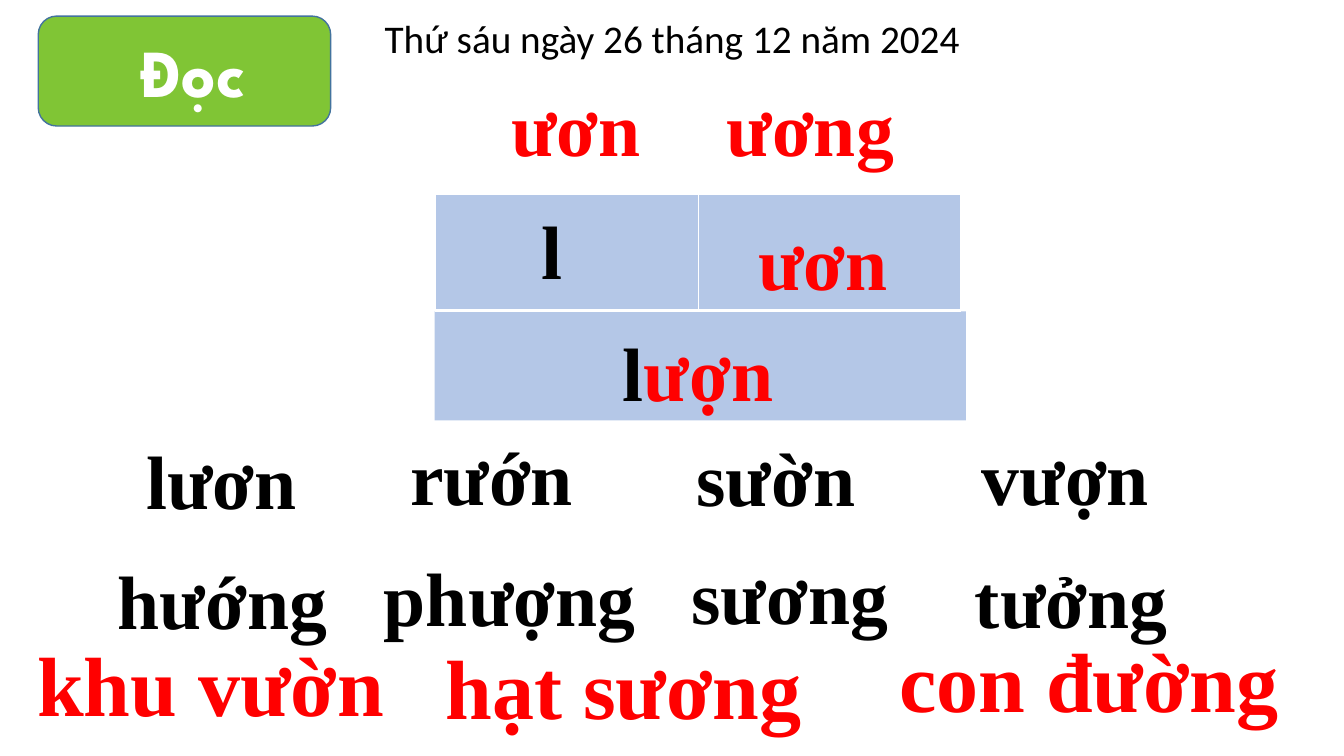
import pptx
import pptx.dml.color
import pptx.enum.shapes
import pptx.enum.text
import pptx.oxml
import pptx.oxml.ns
import pptx.util

RGBColor = pptx.dml.color.RGBColor
BLACK = RGBColor(0x00, 0x00, 0x00)
RED = RGBColor(0xFF, 0x00, 0x00)
WHITE = RGBColor(0xFF, 0xFF, 0xFF)
GREEN = RGBColor(0x80, 0xC5, 0x35)
OUTLINE = RGBColor(0x43, 0x73, 0x9E)
PALE_BLUE = RGBColor(0xB4, 0xC7, 0xE7)

PX = 9144  # 100 px to the inch
SLIDE_WIDTH, SLIDE_HEIGHT = 1333, 750
SYLLABLE_SIZE, PHRASE_SIZE = 54, 60
LEFT = pptx.enum.text.PP_ALIGN.LEFT
CENTER = pptx.enum.text.PP_ALIGN.CENTER
SHAPES = pptx.enum.shapes.MSO_SHAPE


class LessonSlide:
    """Holds the lesson style and the current slide."""

    font = "Times New Roman"

    def __init__(self, presentation):
        self.slide = presentation.slides.add_slide(presentation.slide_layouts[6])

    def box(self, *lengths):
        return [length * PX for length in lengths]

    def add_runs(self, paragraph, runs, size, font=None, bold=True):
        for words, color in runs:
            run = paragraph.add_run()
            run.text = words
            run.font.name = font or self.font
            run.font.size = pptx.util.Pt(size)
            run.font.bold = bold
            run.font.color.rgb = color

    def text(self, box, runs, size=SYLLABLE_SIZE, align=LEFT, font=None, bold=True, group=None):
        shapes = (group or self.slide).shapes
        frame = shapes.add_textbox(*self.box(*box)).text_frame
        frame.word_wrap = True
        frame.auto_size = pptx.enum.text.MSO_AUTO_SIZE.SHAPE_TO_FIT_TEXT
        frame.paragraphs[0].alignment = align
        self.add_runs(frame.paragraphs[0], runs, size, font, bold)

    def word_row(self, words):
        group = self.slide.shapes.add_group_shape()
        for left, top, width, word, align in words:
            self.text((left, top, width, 101), [(word, BLACK)], align=align, group=group)

    def panel(self, kind, box, fill, line=None):
        shape = self.slide.shapes.add_shape(kind, *self.box(*box))
        shape.shadow.inherit = False
        shape.fill.solid()
        shape.fill.fore_color.rgb = fill
        if line is None:
            shape.line.fill.background()
        else:
            shape.line.color.rgb = line
            shape.line.width = pptx.util.Pt(1)
        return shape

    def button(self, box, words, size, font):
        frame = self.panel(SHAPES.ROUNDED_RECTANGLE, box, GREEN, OUTLINE).text_frame
        frame.vertical_anchor = pptx.enum.text.MSO_ANCHOR.MIDDLE
        frame.paragraphs[0].alignment = CENTER
        self.add_runs(frame.paragraphs[0], [(words, WHITE)], size, font)

    def empty_table(self, box, columns, fill):
        table = self.slide.shapes.add_table(1, columns, *self.box(*box)).table
        for cell in table.iter_cells():
            properties = cell._tc.get_or_add_tcPr()
            for side, points in (("L", 1), ("R", 1), ("T", 1), ("B", 3)):
                properties.append(pptx.oxml.parse_xml(
                    f'<a:ln{side} {pptx.oxml.ns.nsdecls("a")} w="{pptx.util.Pt(points)}">'
                    f'<a:solidFill><a:srgbClr val="{WHITE}"/></a:solidFill></a:ln{side}>'))
            cell.fill.solid()
            cell.fill.fore_color.rgb = fill


def main():
    presentation = pptx.Presentation()
    presentation.slide_width = SLIDE_WIDTH * PX
    presentation.slide_height = SLIDE_HEIGHT * PX
    lesson = LessonSlide(presentation)

    # Blended syllable
    lesson.panel(SHAPES.RECTANGLE, (431, 309, 527, 108), PALE_BLUE)
    lesson.text((608, 318, 206, 101), [("l", BLACK), ("ượn", RED)])

    # Heading: reading button and the two rhymes
    lesson.button((38, 16, 290, 109), " Đọc", 48, "League Spartan")
    lesson.text((497, 75, 169, 101), [("ươn", RED)])
    lesson.text((711, 75, 325, 101), [("ương", RED)])

    # Initial sound and rhyme
    lesson.empty_table((432, 193, 521, 115), 2, PALE_BLUE)
    lesson.text((742, 208, 169, 101), [("ươn", RED)])
    lesson.text((448, 197, 218, 101), [("l ", BLACK)], align=CENTER)

    # Practice words
    lesson.word_row([
        (100, 426, 258, "lươn ", CENTER),
        (368, 422, 258, "rướn ", CENTER),
        (676, 423, 206, "sườn ", CENTER),
        (964, 422, 258, "vượn", LEFT),
    ])
    lesson.word_row([
        (107, 545, 258, "hướng", LEFT),
        (371, 542, 323, "phượng", LEFT),
        (676, 540, 258, "sương", LEFT),
        (957, 544, 258, "tưởng", LEFT),
    ])

    # Phrases
    for left, top, phrase in ((27, 623, "khu vườn"), (432, 626, "hạt sương"), (882, 619, "con đường")):
        lesson.text((left, top, 459, 111), [(phrase, RED)], PHRASE_SIZE)

    # Date
    lesson.text((361, 9, 611, 57), [("Thứ sáu ngày 26 tháng 12 năm 2024", BLACK)],
                28, CENTER, "Calibri", bold=False)

    presentation.save("out.pptx")


if __name__ == "__main__":
    main()
